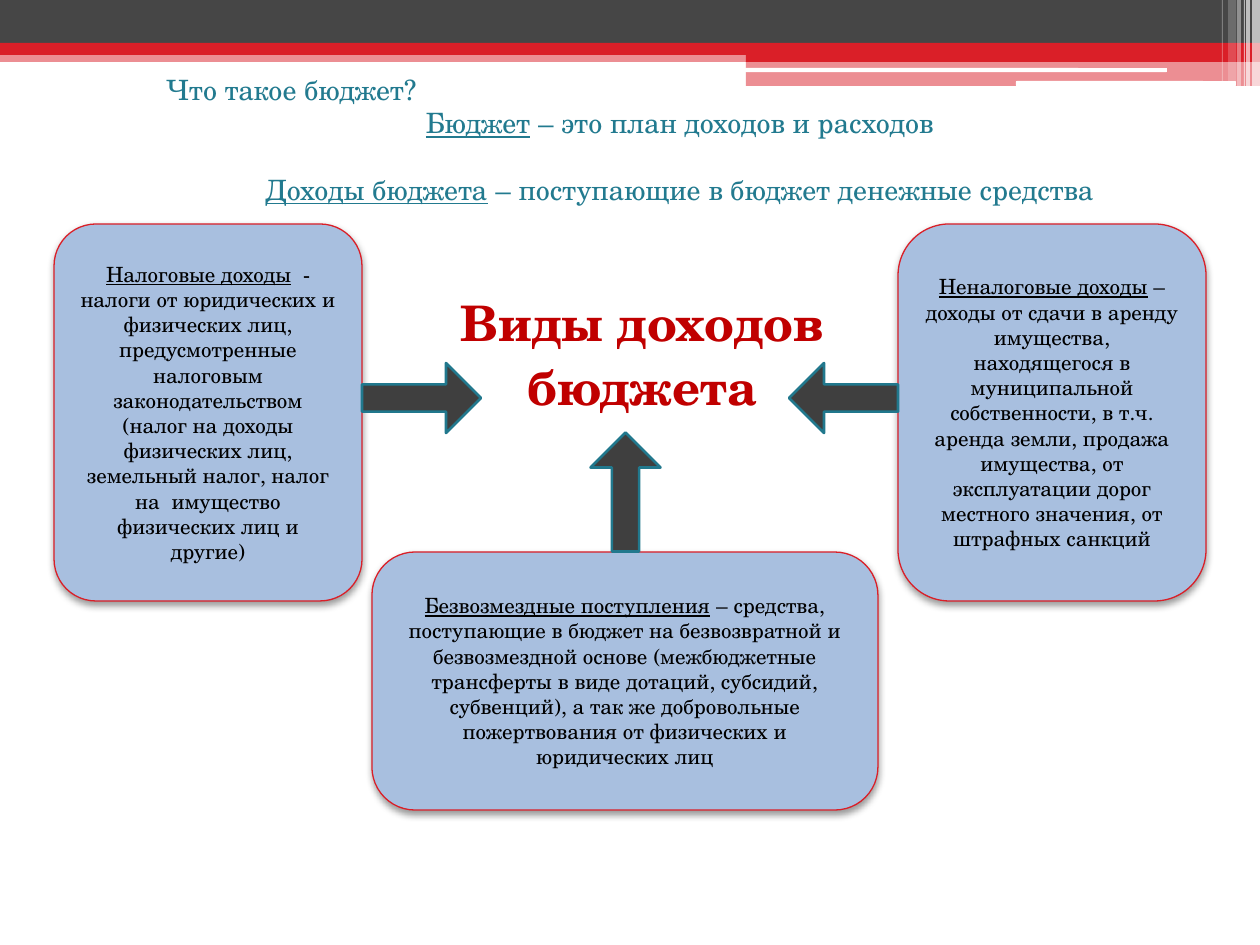
from lxml.etree import SubElement
from pptx import Presentation
from pptx.dml.color import RGBColor
from pptx.enum.shapes import MSO_SHAPE
from pptx.enum.text import MSO_ANCHOR, MSO_AUTO_SIZE, PP_ALIGN
from pptx.oxml.ns import qn
from pptx.util import Emu, Pt

WHITE = RGBColor(0xFF, 0xFF, 0xFF)
BLACK = RGBColor(0x00, 0x00, 0x00)
RED = RGBColor(0xDA, 0x1F, 0x28)
DARK_RED = RGBColor(0xC0, 0x00, 0x00)
CHARCOAL = RGBColor(0x46, 0x46, 0x46)
ARROW_GRAY = RGBColor(0x3F, 0x3F, 0x3F)
ARROW_EDGE = RGBColor(0x21, 0x78, 0x8D)
TEAL = RGBColor(0x22, 0x7A, 0x8F)
PALE_BLUE = RGBColor(0xA8, 0xBF, 0xDF)

RIBBON = [
    (0, 50, 1260, 12, RED, 50),
    (0, 0, 1260, 43, CHARCOAL, 100),
    (0, 43, 1260, 12, RED, 100),
    (746, 49, 514, 13, RED, 100),
    (746, 61, 514, 25, RED, 50),
]
HIGHLIGHTS = [(745, 68, 422, 4), (1016, 81, 220, 5)]
STRIPES = [
    (1252, 8, 86, 65),
    (1246, 4, 86, 65),
    (1244, 1, 86, 60),
    (1237, 4, 86, 40),
    (1228, 8, 81, 20),
    (1222, 1, 81, 30),
]
DEFINITIONS = [
    ("", "Что такое бюджет?", PP_ALIGN.LEFT, 0),
    ("Бюджет", " – это план доходов и расходов", PP_ALIGN.CENTER, 0),
    ("Доходы бюджета", " – поступающие в бюджет денежные средства", PP_ALIGN.CENTER, 19),
]
INCOME_TYPES = [
    (898, 224, 308, 377, 0.167, "Неналоговые доходы",
     " – доходы от сдачи в аренду имущества, находящегося в муниципальной "
     "собственности, в т.ч. аренда земли, продажа имущества, от эксплуатации "
     "дорог местного значения, от штрафных санкций"),
    (54, 224, 308, 377, 0.136, "Налоговые доходы",
     "  - налоги от юридических и физических лиц, предусмотренные налоговым "
     "законодательством (налог на доходы физических лиц, земельный налог, "
     "налог на  имущество физических лиц и другие)"),
    (372, 552, 506, 258, 0.167, "Безвозмездные поступления",
     " – средства, поступающие в бюджет на безвозвратной и безвозмездной "
     "основе (межбюджетные трансферты в виде дотаций, субсидий, субвенций), "
     "а так же добровольные пожертвования от физических и юридических лиц"),
]
ARROWS = [(789, 363, 109, 180), (362, 363, 119, 0), (566, 457, 119, 270)]


class BudgetSlide:
    """Draws the parts of the budget slide in one style, with lengths in px."""

    font = "TeX Gyre Schola"
    scale = 914400 / 126

    def __init__(self, slide):
        self.slide = slide

    def emu(self, *lengths):
        return [Emu(round(length * self.scale)) for length in lengths]

    def style(self, run, size, color, underline=False, bold=False):
        run.font.name = self.font
        run.font.size = Pt(size)
        run.font.color.rgb = color
        run.font.underline = underline
        run.font.bold = bold

    def definition(self, paragraph, term, meaning, size, color, align):
        paragraph.alignment = align
        if term:
            paragraph.text = term
            self.style(paragraph.runs[0], size, color, underline=True)
        explanation = paragraph.add_run()
        explanation.text = meaning
        self.style(explanation, size, color)

    def shape(self, preset, left, top, width, height, fill, alpha=100):
        shape = self.slide.shapes.add_shape(preset, *self.emu(left, top, width, height))
        shape.shadow.inherit = False
        shape.fill.solid()
        shape.fill.fore_color.rgb = fill
        shape.line.fill.background()
        if alpha < 100:
            color = shape.fill._xPr.find(".//" + qn("a:srgbClr"))
            SubElement(color, qn("a:alpha"), val=str(alpha * 1000))
        return shape

    def outline(self, shape, color, width):
        shape.line.color.rgb = color
        shape.line.width = Pt(width)

    def soft_shadow(self, shape):
        effects = shape._element.spPr.find(qn("a:effectLst"))
        shadow = SubElement(effects, qn("a:outerShdw"), blurRad=str(Pt(4.1)),
                            dist=str(Pt(2)), dir="5400000", rotWithShape="0")
        color = SubElement(shadow, qn("a:srgbClr"), val=str(BLACK))
        SubElement(color, qn("a:alpha"), val="40000")

    def title(self, left, top, width, height, text):
        title = self.slide.shapes.title
        title.left, title.top, title.width, title.height = self.emu(left, top, width, height)
        frame = title.text_frame
        frame.text = text
        frame.word_wrap = True
        frame.auto_size = MSO_AUTO_SIZE.NONE
        frame.vertical_anchor = MSO_ANCHOR.TOP
        for paragraph in frame.paragraphs:
            paragraph.alignment = PP_ALIGN.CENTER
            paragraph.space_before = Pt(3)
            self.style(paragraph.runs[0], 28, DARK_RED, bold=True)

    def definitions(self, left, top, width, height, entries):
        box = self.slide.shapes.add_textbox(*self.emu(left, top, width, height))
        frame = box.text_frame
        frame.word_wrap = True
        for index, (term, meaning, align, gap) in enumerate(entries):
            paragraph = frame.add_paragraph() if index else frame.paragraphs[0]
            paragraph.space_before = Pt(gap)
            self.definition(paragraph, term, meaning, 16, TEAL, align)

    def income_box(self, left, top, width, height, rounding, term, meaning):
        box = self.shape(MSO_SHAPE.ROUNDED_RECTANGLE, left, top, width, height, PALE_BLUE)
        box.adjustments[0] = rounding
        self.outline(box, RED, 0.75)
        self.soft_shadow(box)
        frame = box.text_frame
        frame.word_wrap = True
        frame.vertical_anchor = MSO_ANCHOR.MIDDLE
        self.definition(frame.paragraphs[0], term, meaning, 12, BLACK, PP_ALIGN.CENTER)

    def arrow(self, left, top, length, rotation):
        arrow = self.shape(MSO_SHAPE.RIGHT_ARROW, left, top, length, 70, ARROW_GRAY)
        arrow.adjustments[0] = 0.39
        arrow.adjustments[1] = 0.5
        arrow.rotation = rotation
        self.outline(arrow, ARROW_EDGE, 1.5)


def main():
    presentation = Presentation()
    layout = presentation.slide_layouts[5]
    budget = BudgetSlide(presentation.slides.add_slide(layout))
    presentation.slide_width, presentation.slide_height = budget.emu(1260, 945)

    for left, top, width, height, color, alpha in RIBBON:
        budget.shape(MSO_SHAPE.RECTANGLE, left, top, width, height, color, alpha)
    for bounds in HIGHLIGHTS:
        budget.shape(MSO_SHAPE.ROUNDED_RECTANGLE, *bounds, WHITE)
    for left, width, height, alpha in STRIPES:
        budget.shape(MSO_SHAPE.RECTANGLE, left, 0, width, height, WHITE, alpha)

    budget.title(400, 286, 484, 150, "Виды доходов\nбюджета")
    budget.definitions(154, 66, 1052, 149, DEFINITIONS)
    for income in INCOME_TYPES:
        budget.income_box(*income)
    for arrow in ARROWS:
        budget.arrow(*arrow)
    presentation.save("out.pptx")


if __name__ == "__main__":
    main()
